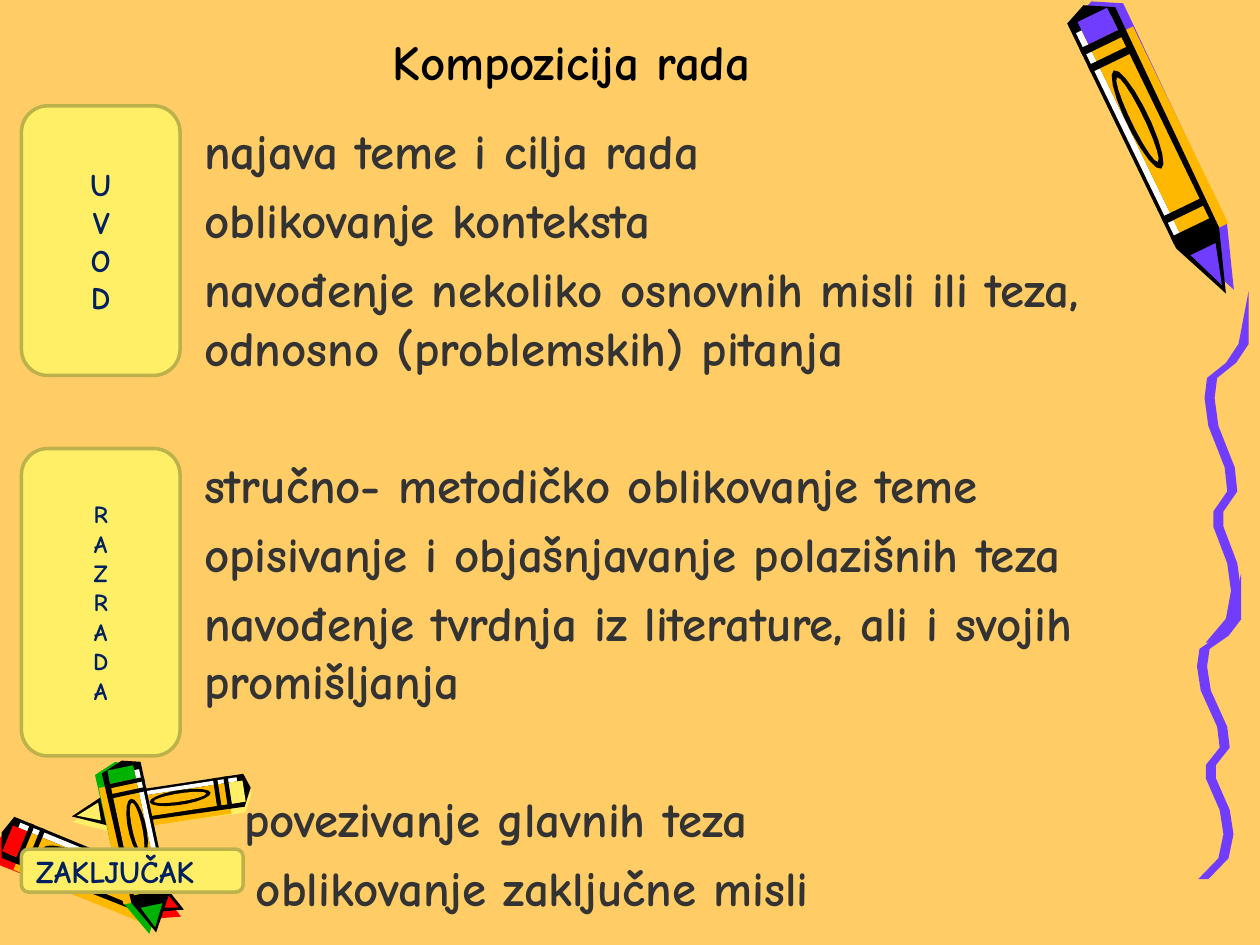
"""Build the slide on the composition of a paper, with crayons, a wavy stroke and three section labels."""
import math

from lxml import etree
from pptx import Presentation
from pptx import util as u
from pptx.dml.color import RGBColor
from pptx.enum import shapes, text
from pptx.oxml.ns import qn

SAND = RGBColor(0xFF, 0xCC, 0x66)
BLACK = RGBColor(0, 0, 0)
WHITE = RGBColor(0xFF, 0xFF, 0xFF)
VIOLET = RGBColor(0x70, 0x3D, 0xFF)
AMBER = RGBColor(0xFF, 0xB8, 0x00)
LEMON = RGBColor(0xFF, 0xEF, 0x66)
RED = RGBColor(0xFF, 0, 0)
GREEN = RGBColor(0, 0xB2, 0)
OLIVE = RGBColor(0xBD, 0xB1, 0x4B)
NAVY = RGBColor(0, 0x20, 0x60)
CHARCOAL = RGBColor(0x33, 0x33, 0x33)

deck = Presentation()
deck.slide_width, deck.slide_height = u.Inches(10), u.Inches(7.5)
CELL = deck.slide_width // 1000
slide = deck.slides.add_slide(deck.slide_layouts[1])
slide.background.fill.solid()
slide.background.fill.fore_color.rgb = SAND


def paint(colour, corners):
    pen_points = [(x * CELL, y * CELL) for x, y in corners]
    pen = slide.shapes.build_freeform(*pen_points[0])
    pen.add_line_segments(pen_points[1:], close=True)
    patch = pen.convert_to_shape()
    patch.shadow.inherit = False
    patch.fill.solid()
    patch.fill.fore_color.rgb = colour
    patch.line.fill.background()


def write(paragraph, words, size, colour, align):
    run = paragraph.add_run()
    run.text = words
    look = {"name": "Comic Neue", "size": u.Pt(size), "bold": True}
    for key, value in look.items():
        setattr(run.font, key, value)
    run.font.color.rgb = colour
    paragraph.alignment = align


SHOULDER = 0.8
silhouette = [(0, -1), (-0.03, -0.1), (0.02, 1), (SHOULDER, 0.9), (1, 0), (SHOULDER, -1)]
cast_shadow = [(along, across + 0.35) for along, across in silhouette]
cone = [(0.84, -0.6), (0.84, 0.5), (0.97, 0)]
strips = {
    "barrel shadow": (0.1, SHOULDER, 0.2, 1.3),
    "highlight": (0.04, 0.78, -0.85, -0.6),
    "barrel": (0.04, 0.78, -0.6, 0.7),
    "cap": (0.01, 0.09, -0.6, 0.7),
}
for name, (near, far, low, high) in strips.items():
    strips[name] = [(near, low), (near, high), (far, high), (far, low)]
bands = [[(at, -1), (at, 0.8), (at + 0.025, 0.8), (at + 0.025, -1)] for at in (0.09, 0.15, 0.69, 0.76)]
turn = [math.radians(angle) for angle in range(0, 360, 20)]
outer_ring, inner_ring = [
    [(0.375 + length * math.cos(angle), -0.15 + breadth * math.sin(angle)) for angle in turn]
    for length, breadth in ((0.175, 0.45), (0.15, 0.25))]

crayons = [
    {"end": (865, 10), "tip": (973, 233), "half_width": 20, "wax": VIOLET},
    {"end": (5, 664), "tip": (146, 722), "half_width": -17, "wax": RED},
    {"end": (195, 627), "tip": (57, 648), "half_width": 13, "wax": LEMON},
    {"end": (96, 608), "tip": (124, 740), "half_width": -16, "wax": GREEN},
]
for crayon in crayons:
    (end_x, end_y), (tip_x, tip_y) = crayon["end"], crayon["tip"]
    run_x, run_y = tip_x - end_x, tip_y - end_y
    breadth = crayon["half_width"] / math.hypot(run_x, run_y)
    layers = [
        (crayon["wax"], cast_shadow),
        (AMBER, strips["barrel shadow"]),
        (BLACK, silhouette),
        (WHITE, strips["highlight"]),
        (AMBER, strips["barrel"]),
        (crayon["wax"], strips["cap"]),
        (crayon["wax"], cone),
        (BLACK, outer_ring),
        (AMBER, inner_ring),
    ]
    layers += [(BLACK, band) for band in bands]
    for colour, outline in layers:
        paint(colour, [(end_x + along * run_x + across * breadth * run_y,
                        end_y + along * run_y - across * breadth * run_x) for along, across in outline])

wave_bends = [(0, 0), (-4, 42), (-14, 57), (-29, 69), (-31, 85), (-28, 107), (-15, 140),
              (-13, 159), (-24, 175), (-24, 187), (-13, 216), (-10, 238), (-14, 260), (-30, 279)]
wave_strokes = [(985, 455, 0.87), (991, 231, 1)]
for start_x, start_y, stretch in wave_strokes:
    middle = [(start_x + x, start_y + y * stretch) for x, y in wave_bends]
    left_edge = [(x - 4, y) for x, y in middle[1:]]
    right_edge = [(x + 4, y) for x, y in middle[1:]]
    paint(VIOLET, middle[:1] + right_edge + left_edge[::-1])

heading, content = slide.shapes.title, slide.placeholders[1]
frames = [(heading, (78, 2, 751, 75)), (content, (114, 91, 842, 646))]
for part, box in frames:
    for side, cells in zip(("left", "top", "width", "height"), box):
        setattr(part, side, cells * CELL)
heading.text_frame.vertical_anchor = text.MSO_ANCHOR.BOTTOM
write(heading.text_frame.paragraphs[0], "Kompozicija rada", 28, BLACK, text.PP_ALIGN.CENTER)

LINE_GAP, SECTION_GAP = 5.6, 45
outline_of_paper = [
    [("najava teme i cilja rada", 38),
     ("oblikovanje konteksta", 38),
     ("navođenje nekoliko osnovnih misli ili teza, odnosno (problemskih) pitanja", 38)],
    [("stručno- metodičko oblikovanje teme", 38),
     ("opisivanje i objašnjavanje polazišnih teza", 38),
     ("navođenje tvrdnja iz literature, ali i svojih promišljanja", 38)],
    [("povezivanje glavnih teza", 70),
     ("oblikovanje zaključne misli", 79)],
]
body = content.text_frame
body.auto_size = text.MSO_AUTO_SIZE.NONE
for section, points in enumerate(outline_of_paper):
    for row, (words, indent) in enumerate(points):
        point = body.add_paragraph() if section or row else body.paragraphs[0]
        write(point, words, 28, CHARCOAL, text.PP_ALIGN.LEFT)
        point.space_before = u.Pt(SECTION_GAP if section and row == 0 else LINE_GAP)
        layout = point._p.get_or_add_pPr()
        for key, value in {"marL": indent * CELL, "indent": 0}.items():
            layout.set(key, str(value))
        etree.SubElement(layout, qn("a:buNone"))

section_labels = [
    ("UVOD", 18, (17, 84, 126, 214), True),
    ("RAZRADA", 14, (17, 356, 126, 244), True),
    ("ZAKLJUČAK", 18, (17, 674, 176, 34), False),
]
for words, size, box, stacked in section_labels:
    label = slide.shapes.add_shape(shapes.MSO_SHAPE.ROUNDED_RECTANGLE, *(n * CELL for n in box))
    label.shadow.inherit = False
    label.fill.solid()
    label.fill.fore_color.rgb = LEMON
    label.line.color.rgb = OLIVE
    label.line.width = u.Pt(2)
    frame = label.text_frame
    frame.vertical_anchor = text.MSO_ANCHOR.MIDDLE
    align = text.PP_ALIGN.CENTER if stacked else text.PP_ALIGN.LEFT
    write(frame.paragraphs[0], words, size, NAVY, align)
    if stacked:
        label.element.txBody.bodyPr.set("vert", "wordArtVert")
    else:
        frame.margin_top = frame.margin_bottom = 0

deck.save("out.pptx")
